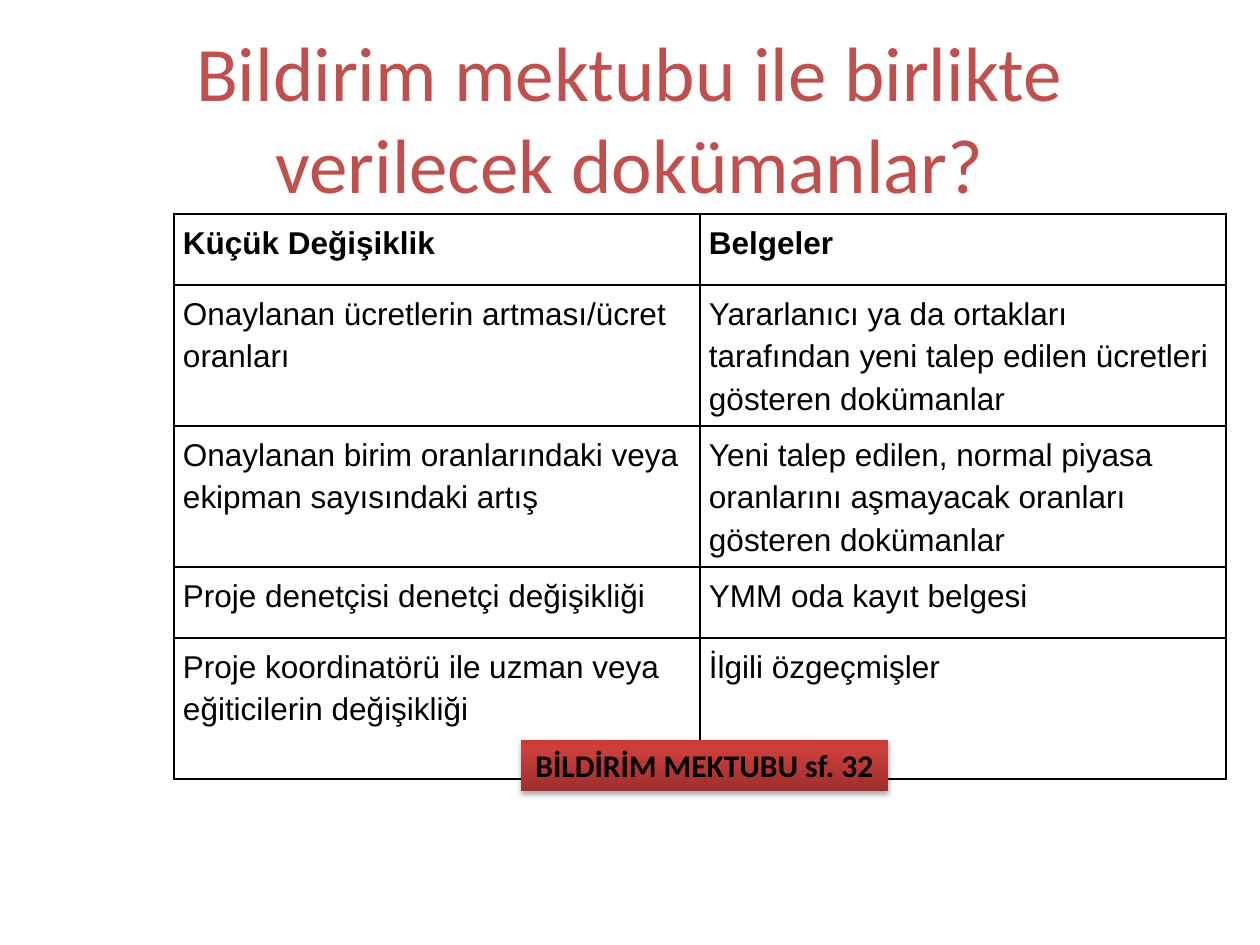
from copy import deepcopy
from dataclasses import dataclass
from typing import Any

from pptx import Presentation
from pptx import util as u
from pptx.dml.color import RGBColor
from pptx.enum import shapes, text
from pptx.oxml import parse_xml
from pptx.oxml.ns import nsdecls

SCALE = 914400 / 126


@dataclass(frozen=True)
class Box:
    x: int
    y: int
    w: int
    h: int


@dataclass(frozen=True)
class Row:
    change: str
    documents: str
    h: int
    bold: bool = False


TITLE = Box(63, 38, 1134, 157)
TABLE = Box(174, 214, 1052, 565)
LABEL = Box(521, 740, 367, 51)
ROWS = [
    Row("Küçük Değişiklik", "Belgeler", 71, True),
    Row("Onaylanan ücretlerin artması/ücret oranları",
        "Yararlanıcı ya da ortakları tarafından yeni talep edilen ücretleri gösteren dokümanlar", 141),
    Row("Onaylanan birim oranlarındaki veya ekipman sayısındaki artış",
        "Yeni talep edilen, normal piyasa oranlarını aşmayacak oranları gösteren dokümanlar", 141),
    Row("Proje denetçisi denetçi değişikliği", "YMM oda kayıt belgesi", 71),
    Row("Proje koordinatörü ile uzman veya eğiticilerin değişikliği", "İlgili özgeçmişler", 141),
]
GRADIENT = [(0, "9C2F2D"), (0.8, "CB3E3A"), (1, "CE3B37")]
CELL = {"margin_left": 9, "margin_right": 9, "margin_top": 5, "margin_bottom": 0}


def px(n: int) -> int:
    return round(n * SCALE)


def rgb(value: str) -> RGBColor:
    return RGBColor.from_string(value)


def place(box: Box) -> tuple[int, int, int, int]:
    return px(box.x), px(box.y), px(box.w), px(box.h)


def apply(obj: Any, values: dict[str, Any]) -> None:
    for name, value in values.items():
        setattr(obj, name, value)


def write(tf: Any, words: str, font: dict[str, Any], color: str, para: dict[str, Any]) -> None:
    p = tf.paragraphs[0]
    apply(p, para)
    r = p.add_run()
    r.text = words
    apply(r.font, font)
    r.font.color.rgb = rgb(color)


def add_borders(cell: Any) -> None:
    props = cell._tc.get_or_add_tcPr()
    for i, side in enumerate("LRTB"):
        props.insert(i, parse_xml(
            f'<a:ln{side} {nsdecls("a")} w="12700"><a:solidFill>'
            f'<a:srgbClr val="000000"/></a:solidFill></a:ln{side}>'))


def add_title(s: Any) -> None:
    sp = s.shapes.title
    apply(sp, dict(zip(("left", "top", "width", "height"), place(TITLE))))
    tf = sp.text_frame
    apply(tf, {"word_wrap": True, "vertical_anchor": text.MSO_ANCHOR.MIDDLE})
    write(tf, "Bildirim mektubu ile birlikte verilecek dokümanlar?",
          {"name": "Calibri", "size": u.Pt(44)}, "C0504D", {"alignment": text.PP_ALIGN.CENTER})


def add_documents(s: Any) -> None:
    table = s.shapes.add_table(len(ROWS), 2, *place(TABLE)).table
    apply(table, {"first_row": False, "horz_banding": False})
    for column in table.columns:
        column.width = px(TABLE.w // 2)
    for i, row in enumerate(ROWS):
        table.rows[i].height = px(row.h)
        for j, words in enumerate((row.change, row.documents)):
            cell = table.cell(i, j)
            apply(cell, {name: px(n) for name, n in CELL.items()})
            cell.fill.background()
            add_borders(cell)
            align = text.PP_ALIGN.JUSTIFY if i == j == 0 else text.PP_ALIGN.LEFT
            write(cell.text_frame, words,
                  {"name": "Arial", "size": u.Pt(18), "bold": row.bold}, "000000",
                  {"alignment": align, "line_spacing": 1.2, "space_after": u.Pt(3)})


def add_label(s: Any) -> None:
    sp = s.shapes.add_shape(shapes.MSO_SHAPE.RECTANGLE, *place(LABEL))
    sp.line.fill.background()
    sp.fill.gradient()
    sp.fill.gradient_angle = 90
    first = sp._element.spPr.xpath("./a:gradFill/a:gsLst/a:gs")[0]
    first.addnext(deepcopy(first))
    for stop, (position, color) in zip(sp.fill.gradient_stops, GRADIENT):
        stop.position = position
        stop.color.rgb = rgb(color)
    sp._element.spPr.append(parse_xml(
        f'<a:effectLst {nsdecls("a")}><a:outerShdw blurRad="40000" dist="23000" '
        'dir="5400000" rotWithShape="0"><a:srgbClr val="000000"><a:alpha val="35000"/>'
        '</a:srgbClr></a:outerShdw></a:effectLst>'))
    tf = sp.text_frame
    apply(tf, {"word_wrap": False, "auto_size": text.MSO_AUTO_SIZE.SHAPE_TO_FIT_TEXT,
               "vertical_anchor": text.MSO_ANCHOR.TOP})
    write(tf, "BİLDİRİM MEKTUBU sf. 32",
          {"name": "Calibri", "size": u.Pt(18), "bold": True}, "000000",
          {"alignment": text.PP_ALIGN.CENTER})


def main() -> None:
    prs = Presentation()
    apply(prs, {"slide_width": u.Inches(10), "slide_height": u.Inches(7.5)})
    s = prs.slides.add_slide(prs.slide_layouts[5])
    add_title(s)
    add_documents(s)
    add_label(s)
    prs.save("out.pptx")


if __name__ == "__main__":
    main()
